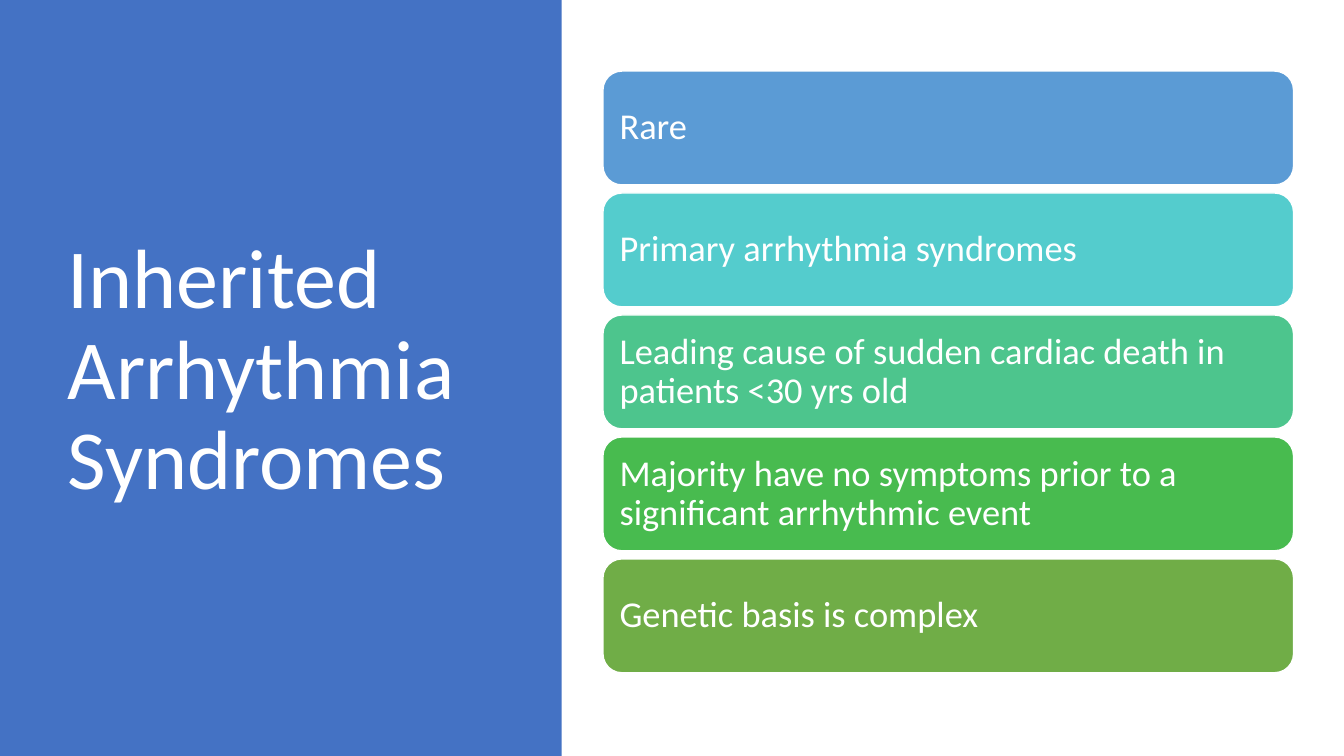
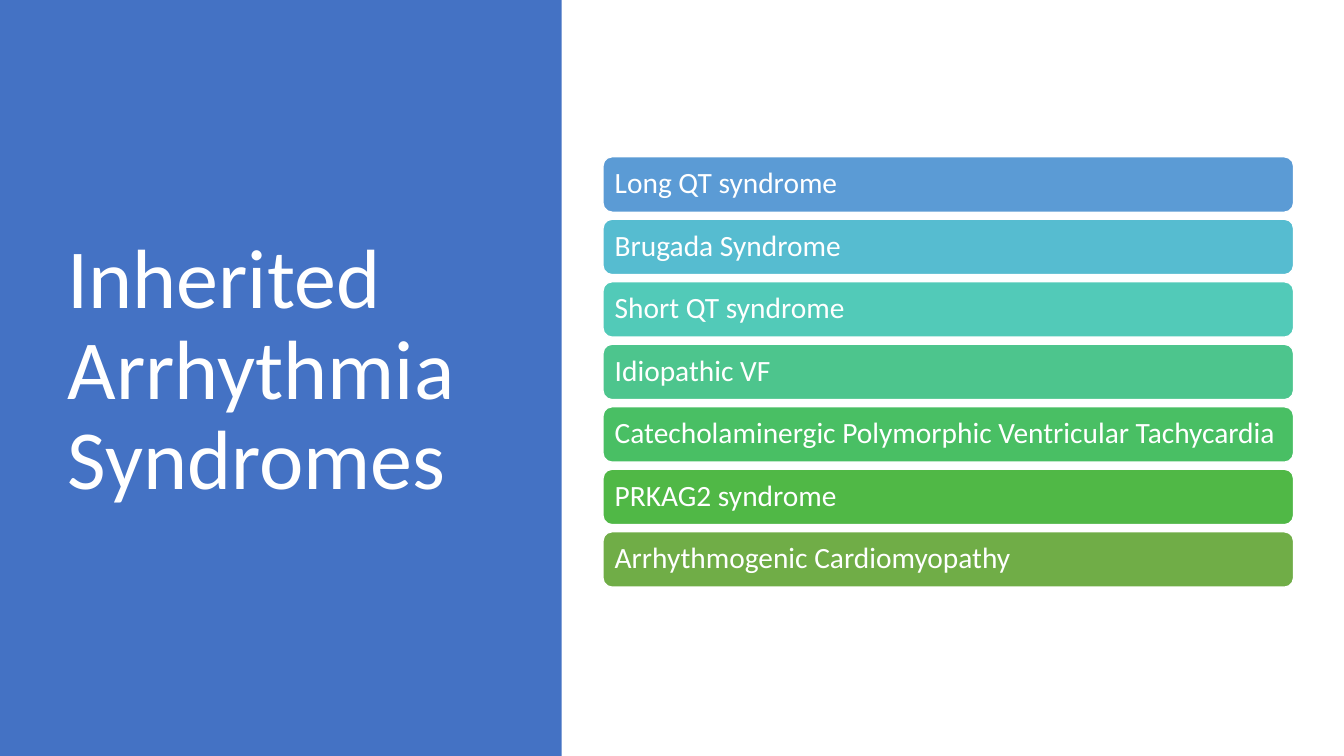
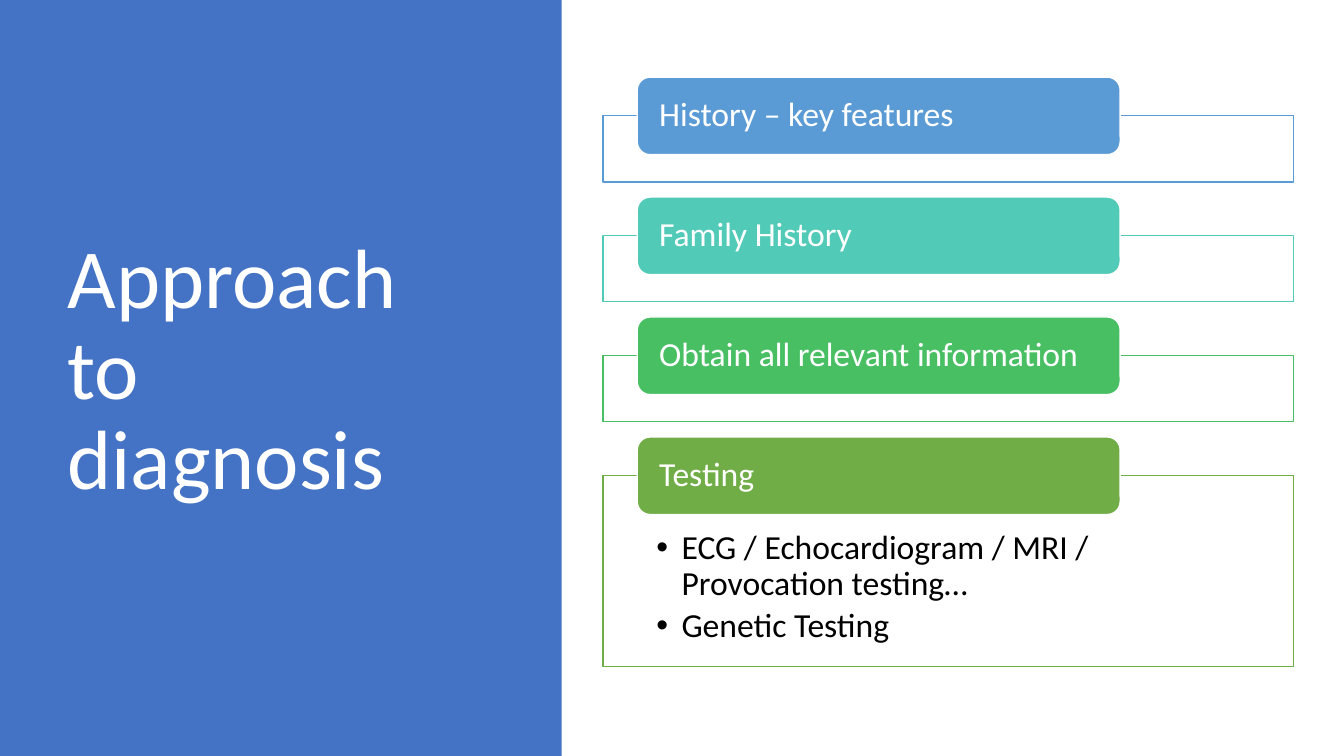
from dataclasses import dataclass

from lxml import etree
from pptx import Presentation
from pptx.dml.color import RGBColor
from pptx.enum.shapes import MSO_SHAPE
from pptx.enum.text import MSO_ANCHOR, MSO_AUTO_SIZE, PP_ALIGN
from pptx.oxml.ns import qn
from pptx.util import Inches, Pt

RECT, ROUND_RECT = MSO_SHAPE.RECTANGLE, MSO_SHAPE.ROUNDED_RECTANGLE
MIDDLE, TOP = MSO_ANCHOR.MIDDLE, MSO_ANCHOR.TOP
LEFT, NO_AUTOFIT = PP_ALIGN.LEFT, MSO_AUTO_SIZE.NONE
TITLE_ONLY = 5

FONT = "Calibri"
WHITE, BLACK, PANEL_BLUE = "FFFFFF", "000000", "4472C4"
SLIDE_W, SLIDE_H = 13.33, 7.5
PANEL_W = 5.57
TITLE_BOX = (0.57, 0.68, 4.16, 6.02)
STACK_LEFT, STACK_W, STACK_CENTRE = 5.98, 6.85, 3.69

TAB_INDENT, TAB_W, TAB_H = 0.34, 4.79, 0.77
TAB_OVERLAP = 0.38
FRAME_GAP = 0.53
BULLET_INDENT = 0.25


@dataclass(frozen=True)
class Bar:
    text: str
    color: str


@dataclass(frozen=True)
class BarStack:
    title: str
    bar_height: float
    gap: float
    inset: float
    size: int
    bars: tuple[Bar, ...]


@dataclass(frozen=True)
class Step:
    heading: str
    color: str
    frame_height: float = 0.66
    details: tuple[str, ...] = ()


BAR_SLIDES = (
    BarStack("Inherited Arrhythmia Syndromes", 1.13, 0.08, 0.11, 26, (
        Bar("Rare", "5B9BD5"),
        Bar("Primary arrhythmia syndromes", "54CCCD"),
        Bar("Leading cause of sudden cardiac death in patients <30 yrs old", "4DC58D"),
        Bar("Majority have no symptoms prior to a significant arrhythmic event", "48BB4F"),
        Bar("Genetic basis is complex", "70AD47"),
    )),
    BarStack("Inherited Arrhythmia Syndromes", 0.55, 0.07, 0.09, 21, (
        Bar("Long QT syndrome", "5B9BD5"),
        Bar("Brugada Syndrome", "56BCD0"),
        Bar("Short QT syndrome", "52CAB8"),
        Bar("Idiopathic VF", "4DC58D"),
        Bar("Catecholaminergic Polymorphic Ventricular Tachycardia", "49BF64"),
        Bar("PRKAG2 syndrome", "50B846"),
        Bar("Arrhythmogenic Cardiomyopathy", "70AD47"),
    )),
)
STEPS_TITLE = "Approach to diagnosis"
STEPS = (
    Step("History – key features", "5B9BD5"),
    Step("Family History", "52CAB8"),
    Step("Obtain all relevant information", "49BF64"),
    Step("Testing", "70AD47", 1.9,
         ("ECG / Echocardiogram / MRI / Provocation testing…", "Genetic Testing")),
)


def rgb(color: str) -> RGBColor:
    return RGBColor.from_string(color)


def set_values(target, values: dict) -> None:
    for name, value in values.items():
        setattr(target, name, value)


def add_box(slide, kind, box: tuple, fill: str, line: str | None = None):
    shape = slide.shapes.add_shape(kind, *map(Inches, box))
    shape.shadow.inherit = False
    shape.fill.solid()
    shape.fill.fore_color.rgb = rgb(fill)
    if line:
        shape.line.color.rgb = rgb(line)
        shape.line.width = Pt(1)
    else:
        shape.line.fill.background()
    return shape


def write(shape, paragraphs: tuple[str, ...], size: int, color: str, anchor=MIDDLE,
          insets: tuple = (0.1, 0.05, 0.1, 0.05)) -> None:
    """Fill a shape with left-aligned text; insets run left, top, right, bottom."""
    frame = shape.text_frame
    frame.text = "\n".join(paragraphs)
    sides = ("margin_left", "margin_top", "margin_right", "margin_bottom")
    set_values(frame, dict(zip(sides, map(Inches, insets))))
    set_values(frame, {"word_wrap": True, "auto_size": NO_AUTOFIT,
                       "vertical_anchor": anchor})
    for paragraph in frame.paragraphs:
        set_values(paragraph, {"alignment": LEFT, "line_spacing": 0.9})
        set_values(paragraph.font, {"name": FONT, "size": Pt(size)})
        paragraph.font.color.rgb = rgb(color)
        for run in paragraph.runs:
            set_values(run.font, {"name": FONT, "size": Pt(size)})
            run.font.color.rgb = rgb(color)


def add_bullet(paragraph) -> None:
    paragraph.space_after = Pt(4)
    properties = paragraph._p.get_or_add_pPr()
    properties.set("marL", str(Inches(BULLET_INDENT)))
    properties.set("indent", str(-Inches(BULLET_INDENT)))
    etree.SubElement(properties, qn("a:buFont")).set("typeface", "Arial")
    etree.SubElement(properties, qn("a:buChar")).set("char", "•")
    # The schema wants default run properties after the bullet.
    defaults = properties.find(qn("a:defRPr"))
    if defaults is not None:
        properties.append(defaults)


def add_titled_slide(deck, title: str):
    slide = deck.slides.add_slide(deck.slide_layouts[TITLE_ONLY])
    panel = add_box(slide, RECT, (0, 0, PANEL_W, SLIDE_H), PANEL_BLUE)
    heading = slide.shapes.title
    heading._element.addprevious(panel._element)
    set_values(heading, dict(zip(("left", "top", "width", "height"),
                                 map(Inches, TITLE_BOX))))
    write(heading, (title,), 60, WHITE)
    return slide


def add_bar_slide(deck, stack: BarStack) -> None:
    slide = add_titled_slide(deck, stack.title)
    pitch = stack.bar_height + stack.gap
    top = STACK_CENTRE - (len(stack.bars) * pitch - stack.gap) / 2
    for index, bar in enumerate(stack.bars):
        box = (STACK_LEFT, top + index * pitch, STACK_W, stack.bar_height)
        shape = add_box(slide, ROUND_RECT, box, bar.color, WHITE)
        write(shape, (bar.text,), stack.size, WHITE, insets=(stack.inset,) * 4)


def add_step_slide(deck, title: str, steps: tuple[Step, ...]) -> None:
    """Stack outlined frames, each with a coloured heading tab over its top edge."""
    slide = add_titled_slide(deck, title)
    stack_height = (TAB_OVERLAP + sum(step.frame_height for step in steps)
                    + FRAME_GAP * (len(steps) - 1))
    top = STACK_CENTRE - stack_height / 2 + TAB_OVERLAP
    for step in steps:
        frame = add_box(slide, RECT, (STACK_LEFT, top, STACK_W, step.frame_height),
                        WHITE, step.color)
        fill_color = frame._element.spPr.find(qn("a:solidFill"))[0]
        etree.SubElement(fill_color, qn("a:alpha")).set("val", "90000")
        if step.details:
            write(frame, step.details, 24, BLACK, TOP, (0.53, 0.55, 0.53, 0.19))
            for paragraph in frame.text_frame.paragraphs:
                add_bullet(paragraph)
        tab = add_box(slide, ROUND_RECT,
                      (STACK_LEFT + TAB_INDENT, top - TAB_OVERLAP, TAB_W, TAB_H),
                      step.color, WHITE)
        write(tab, (step.heading,), 24, WHITE, insets=(0.18, 0, 0.18, 0))
        top += step.frame_height + FRAME_GAP


def main() -> None:
    deck = Presentation()
    set_values(deck, {"slide_width": Inches(SLIDE_W), "slide_height": Inches(SLIDE_H)})
    for stack in BAR_SLIDES:
        add_bar_slide(deck, stack)
    add_step_slide(deck, STEPS_TITLE, STEPS)
    deck.save("out.pptx")


if __name__ == "__main__":
    main()
